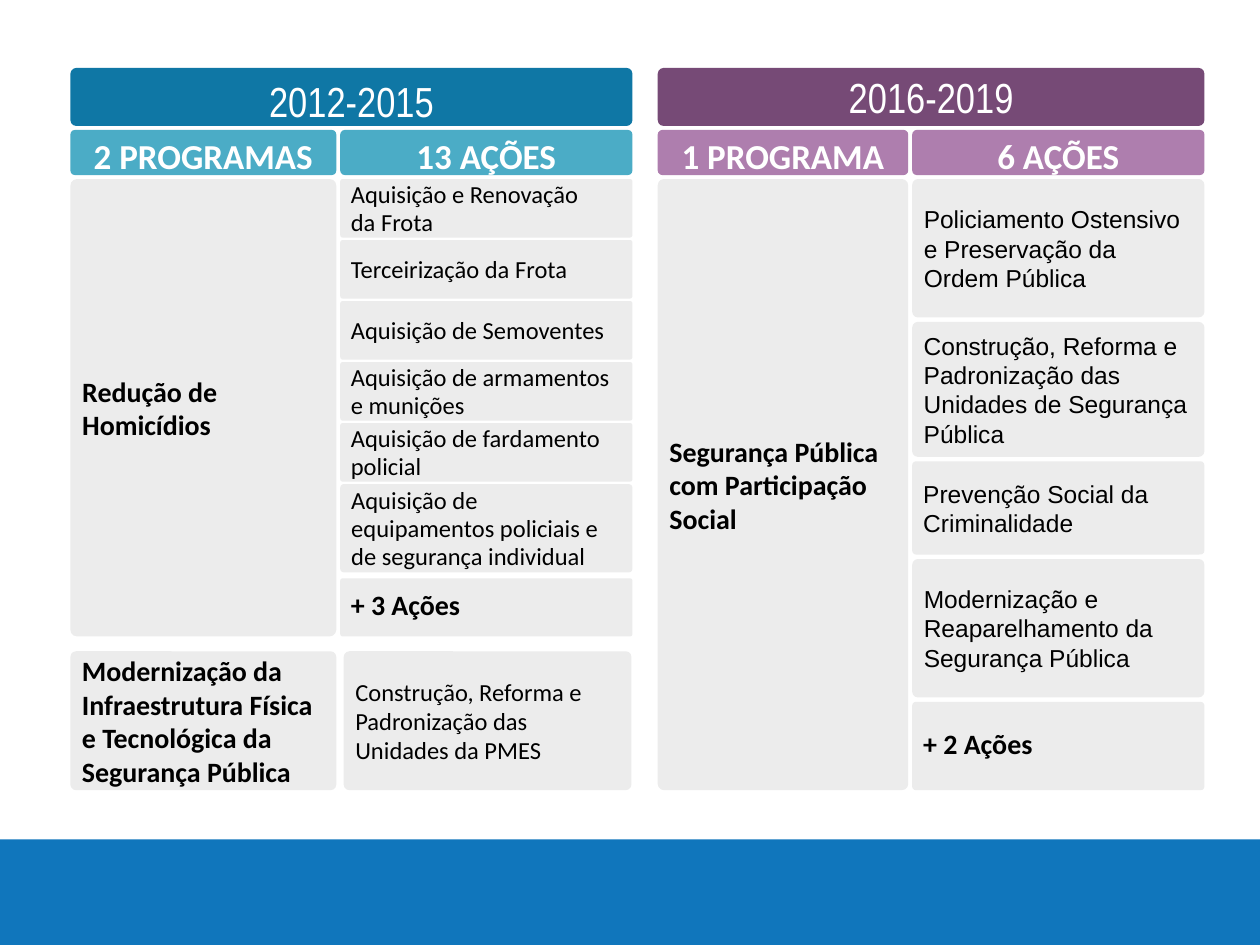
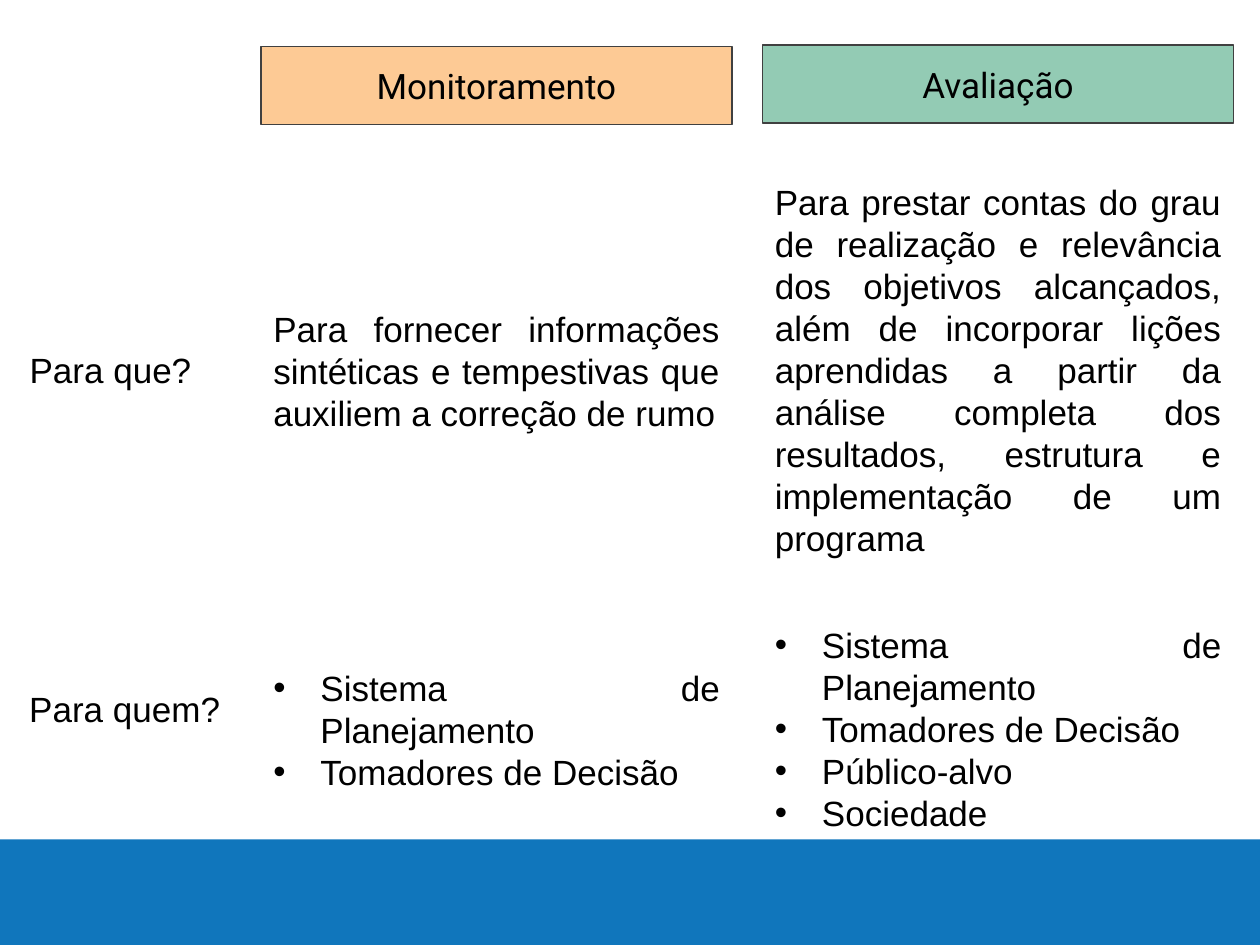
from lxml.etree import SubElement
from pptx import Presentation
from pptx.dml.color import RGBColor
from pptx.enum.shapes import MSO_SHAPE as Shape
from pptx.enum.text import MSO_ANCHOR as Anchor, MSO_AUTO_SIZE as AutoSize, PP_ALIGN as Align
from pptx.oxml.ns import qn
from pptx.util import Cm, Pt

WHITE = RGBColor(0xFF, 0xFF, 0xFF)
BLACK = RGBColor(0x00, 0x00, 0x00)
GREY = RGBColor(0xEC, 0xEC, 0xEC)
OUTLINE = RGBColor(0x40, 0x40, 0x40)
FOOTER_BLUE = RGBColor(0x10, 0x76, 0xBC)
DEEP_BLUE = RGBColor(0x0F, 0x77, 0xA5)
LIGHT_BLUE = RGBColor(0x4B, 0xAC, 0xC6)
DEEP_PURPLE = RGBColor(0x76, 0x4A, 0x76)
LIGHT_PURPLE = RGBColor(0xAE, 0x7E, 0xAE)
ORANGE = RGBColor(0xFD, 0x96, 0x2D)
GREEN = RGBColor(0x28, 0x99, 0x6B)

PLANS = [
    {
        "period": "2012-2015", "period_colour": DEEP_BLUE, "period_spacing": 1.13,
        "counts": ("2 PROGRAMAS", "13 AÇÕES"), "count_colour": LIGHT_BLUE,
        "left": 1.42, "program_width": 5.36,
        "program": "Redução de Homicídios", "bottom": 12.83,
        "action_font": "Calibri", "action_spacing": Pt(16), "gap": 0.05,
        "actions": [
            ("Aquisição e Renovação\nda Frota", 1.18),
            ("Terceirização da Frota", 1.18),
            ("Aquisição de Semoventes", 1.18),
            ("Aquisição de armamentos e munições", 1.18),
            ("Aquisição de fardamento policial", 1.18),
            ("Aquisição de equipamentos policiais e de segurança individual", 1.78),
        ],
        "more": ("+ 3 Ações", 1.17),
    },
    {
        "period": "2016-2019", "period_colour": DEEP_PURPLE, "period_spacing": None,
        "counts": ("1 PROGRAMA", "6 AÇÕES"), "count_colour": LIGHT_PURPLE,
        "left": 13.26, "program_width": 5.05,
        "program": "Segurança Pública com Participação Social", "bottom": 15.93,
        "action_font": "Arial", "action_spacing": None, "gap": 0.09,
        "actions": [
            ("Policiamento Ostensivo e Preservação da Ordem Pública", 2.79),
            ("Construção, Reforma e Padronização das Unidades de Segurança Pública", 2.72),
            ("Prevenção Social da Criminalidade", 1.88),
            ("Modernização e Reaparelhamento da Segurança Pública", 2.79),
        ],
        "more": ("+ 2 Ações", 1.78),
    },
]
SECOND_PROGRAM = "Modernização da Infraestrutura Física e Tecnológica da Segurança Pública"
SECOND_ACTION = "Construção, Reforma e Padronização das Unidades da PMES"

QUESTIONS = [("Para que?", 6.91, 3.81), ("Para quem?", 13.74, 4.39)]
APPROACHES = [
    {
        "name": "Monitoramento", "colour": ORANGE, "left": 5.26, "top": 0.94,
        "purpose": ("Para fornecer informações sintéticas e tempestivas que "
                    "auxiliem a correção de rumo", 6.07, 2.82),
        "audience": ("Sistema de Planejamento\nTomadores de Decisão", 13.31, 1.96),
    },
    {
        "name": "Avaliação", "colour": GREEN, "left": 15.37, "top": 0.91,
        "purpose": ("Para prestar contas do grau de realização e relevância dos objetivos "
                    "alcançados, além de incorporar lições aprendidas a partir da análise "
                    "completa dos resultados, estrutura e implementação de um programa",
                    3.51, 7.95),
        "audience": ("Sistema de Planejamento\nTomadores de Decisão\nPúblico-alvo\nSociedade",
                     12.45, 3.68),
    },
]

PERIOD_TOP, PERIOD_HEIGHT = 1.37, 1.17
COUNT_TOP, COUNT_HEIGHT = 2.62, 0.91
BODY_TOP = 3.61
COLUMN_GAP = 0.08
ACTION_WIDTH = 5.89
SECOND_TOP, SECOND_HEIGHT = 13.13, 2.8
APPROACH_WIDTH, APPROACH_HEIGHT = 9.5, 1.57
BULLET_INDENT = Cm(0.95)


def write(frame, text, font, size, colour=BLACK, bold=False, align=Align.LEFT,
          spacing=None, margin=0, bulleted=False):
    frame.text = text
    for paragraph in frame.paragraphs:
        if bulleted:
            properties = paragraph._p.get_or_add_pPr()
            properties.set("marL", str(BULLET_INDENT))
            properties.set("indent", str(-BULLET_INDENT))
            SubElement(properties, qn("a:buFont")).set("typeface", "Arial")
            SubElement(properties, qn("a:buChar")).set("char", "•")
        paragraph.alignment = align
        if spacing:
            paragraph.line_spacing = spacing
        if margin:
            paragraph.space_after = Pt(margin)
        for run in paragraph.runs:
            run.font.name = font
            run.font.size = Pt(size)
            run.font.bold = bold
            run.font.color.rgb = colour


def add_block(slide, kind, left, top, width, height, colour):
    block = slide.shapes.add_shape(kind, Cm(left), Cm(top), Cm(width), Cm(height))
    block.shadow.inherit = False
    block.fill.solid()
    block.fill.fore_color.rgb = colour
    block.line.fill.background()
    block.text_frame.word_wrap = True
    block.text_frame.vertical_anchor = Anchor.MIDDLE
    return block


def add_heading(slide, left, top, width, height, text, colour, font, size, bold, spacing):
    heading = add_block(slide, Shape.ROUNDED_RECTANGLE, left, top, width, height, colour)
    heading.adjustments[0] = 0.1
    write(heading.text_frame, text, font, size, WHITE, bold, Align.CENTER, spacing)


def add_card(slide, left, top, width, height, text, font="Calibri", size=16, bold=True,
             spacing=None, margin=0):
    card = add_block(slide, Shape.ROUNDED_RECTANGLE, left, top, width, height, GREY)
    card.adjustments[0] = 0.025 if height > width else 0.041
    frame = card.text_frame
    frame.margin_left = frame.margin_right = Cm(0.2)
    frame.margin_top = frame.margin_bottom = Cm(0.08)
    write(frame, text, font, size, bold=bold, spacing=spacing, margin=margin)


def add_note(slide, left, top, width, height, text, align, wrap=True, bulleted=False):
    note = slide.shapes.add_textbox(Cm(left), Cm(top), Cm(width), Cm(height))
    note.text_frame.word_wrap = wrap
    note.text_frame.auto_size = AutoSize.SHAPE_TO_FIT_TEXT
    write(note.text_frame, text, "Arial", 20, align=align, bulleted=bulleted)


def new_slide(deck):
    slide = deck.slides.add_slide(deck.slide_layouts[6])
    add_block(slide, Shape.RECTANGLE, 0, 16.92, 25.4, 2.13, FOOTER_BLUE)
    return slide


def add_plan(slide, plan):
    left, program_width = plan["left"], plan["program_width"]
    action_left = left + program_width + COLUMN_GAP
    total_width = program_width + COLUMN_GAP + ACTION_WIDTH
    add_heading(slide, left, PERIOD_TOP, total_width, PERIOD_HEIGHT, plan["period"],
                plan["period_colour"], "Arial Narrow", 24, False, plan["period_spacing"])
    columns = ((left, program_width), (action_left, ACTION_WIDTH))
    for count, (column_left, column_width) in zip(plan["counts"], columns):
        add_heading(slide, column_left, COUNT_TOP, column_width, COUNT_HEIGHT, count,
                    plan["count_colour"], "Calibri", 20, True, 1.13)
    add_card(slide, left, BODY_TOP, program_width, plan["bottom"] - BODY_TOP,
             plan["program"], margin=3)
    top = BODY_TOP
    for action, height in plan["actions"]:
        add_card(slide, action_left, top, ACTION_WIDTH, height, action,
                 plan["action_font"], 14, False, plan["action_spacing"])
        top += height + plan["gap"]
    more, height = plan["more"]
    add_card(slide, action_left, plan["bottom"] - height, ACTION_WIDTH, height, more,
             spacing=Pt(16))


def build_plans(deck):
    slide = new_slide(deck)
    for plan in PLANS:
        add_plan(slide, plan)
    add_card(slide, 1.42, SECOND_TOP, 5.36, SECOND_HEIGHT, SECOND_PROGRAM, margin=3)
    add_card(slide, 6.93, SECOND_TOP, 5.8, SECOND_HEIGHT, SECOND_ACTION,
             size=14, bold=False, margin=3)


def build_approaches(deck):
    slide = new_slide(deck)
    for question, top, width in QUESTIONS:
        add_note(slide, 0.3, top, width, 1.11, question, Align.RIGHT, wrap=False)
    for approach in APPROACHES:
        left = approach["left"]
        header = add_block(slide, Shape.RECTANGLE, left, approach["top"],
                           APPROACH_WIDTH, APPROACH_HEIGHT, approach["colour"])
        fill_colour = header.element.spPr.find(".//" + qn("a:srgbClr"))
        SubElement(fill_colour, qn("a:alpha")).set("val", "50000")
        header.line.color.rgb = OUTLINE
        header.line.width = Pt(1)
        write(header.text_frame, approach["name"], "Roboto", 20, align=Align.CENTER)
        for part in ("purpose", "audience"):
            text, top, height = approach[part]
            add_note(slide, left, top, APPROACH_WIDTH, height, text, Align.JUSTIFY,
                     bulleted=part == "audience")


def main():
    deck = Presentation()
    deck.slide_width, deck.slide_height = Cm(25.4), Cm(19.05)
    build_plans(deck)
    build_approaches(deck)
    deck.save("out.pptx")


if __name__ == "__main__":
    main()
